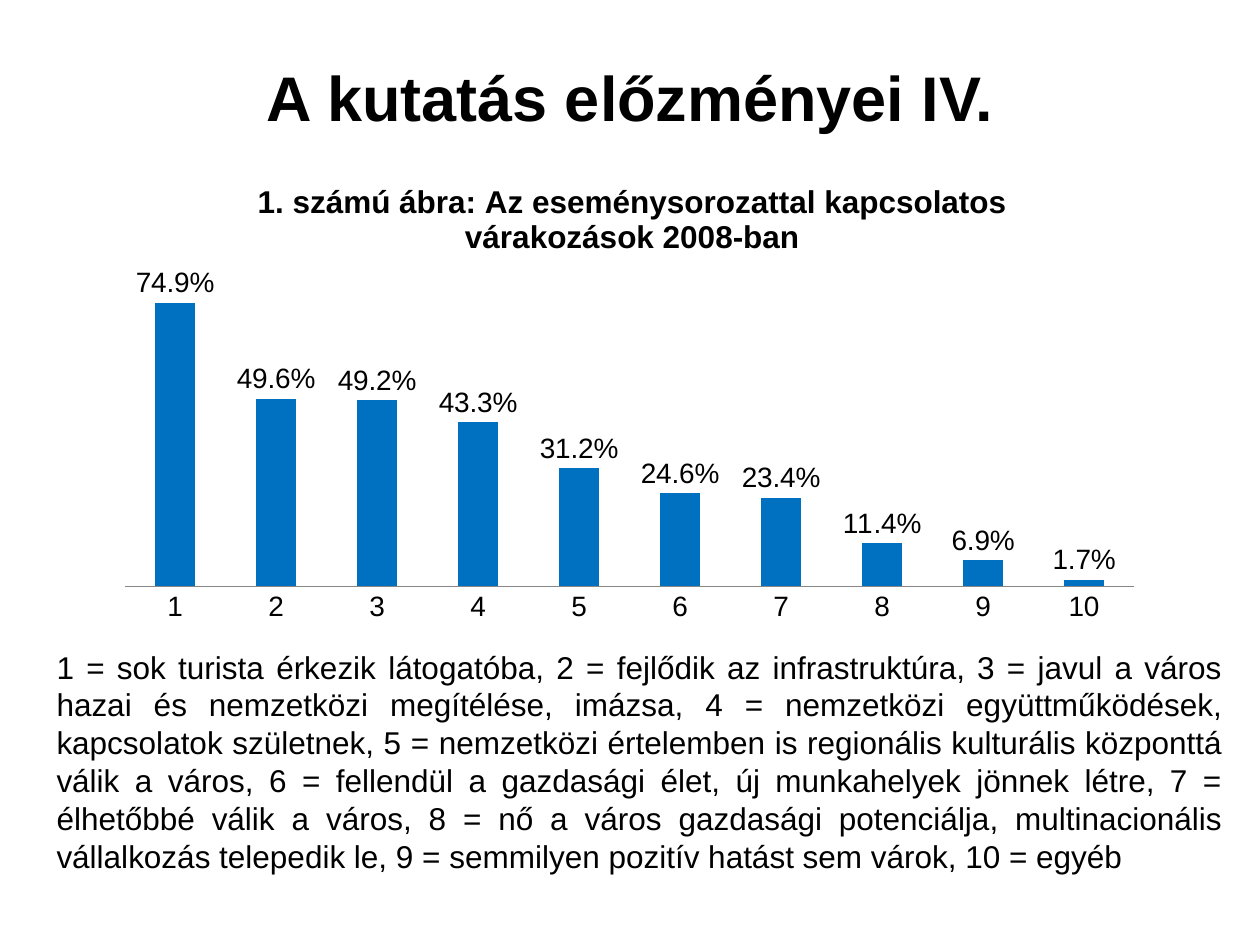
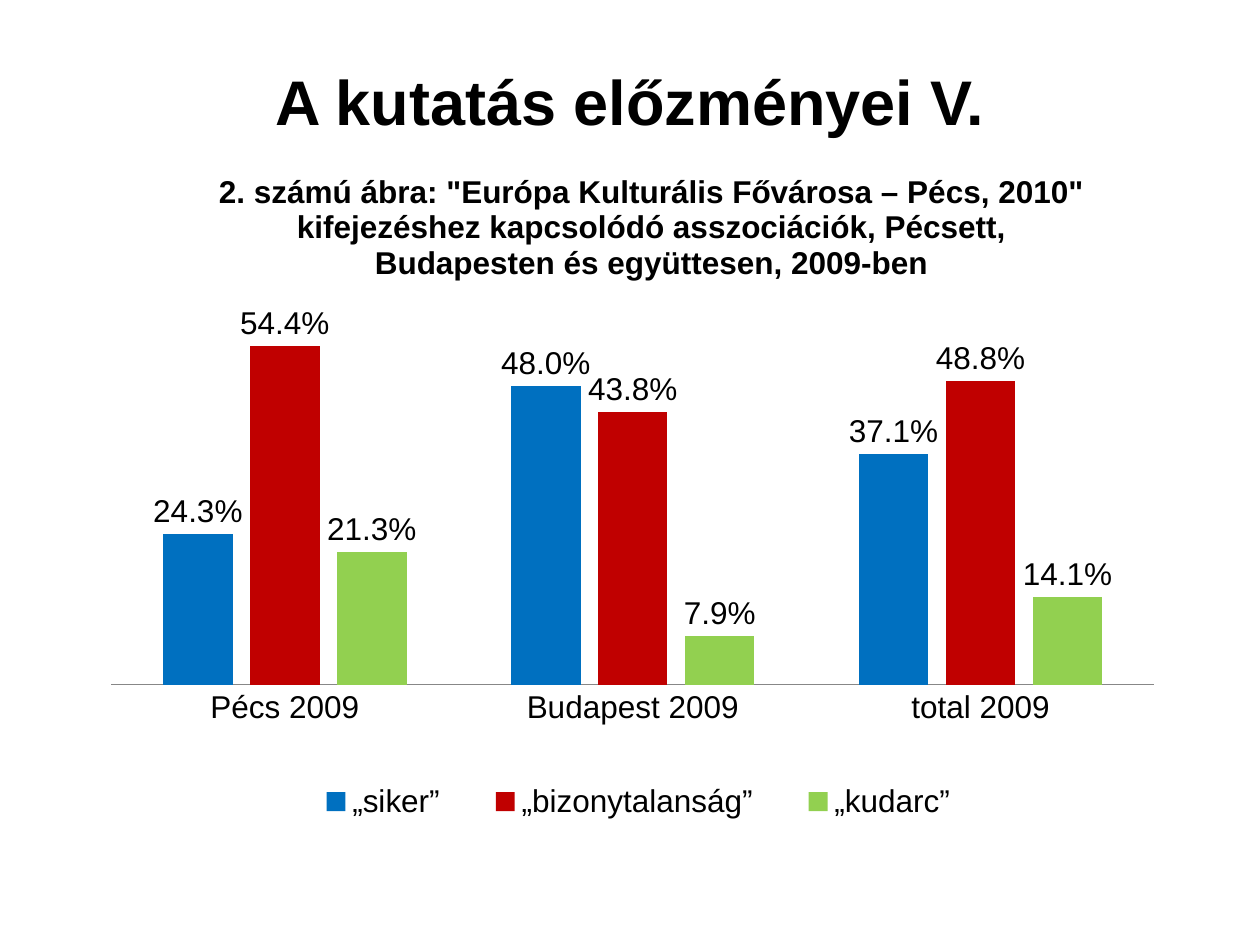
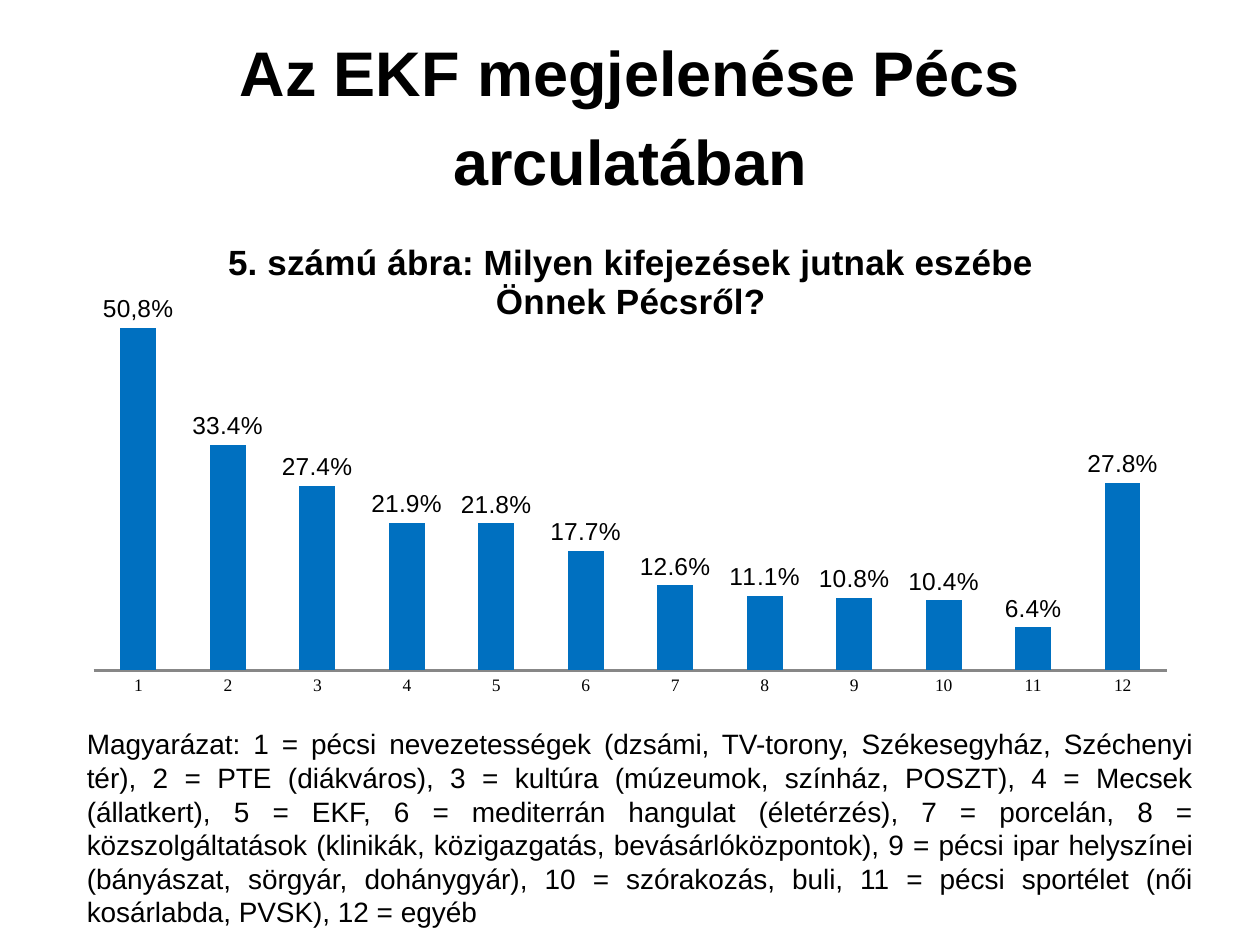
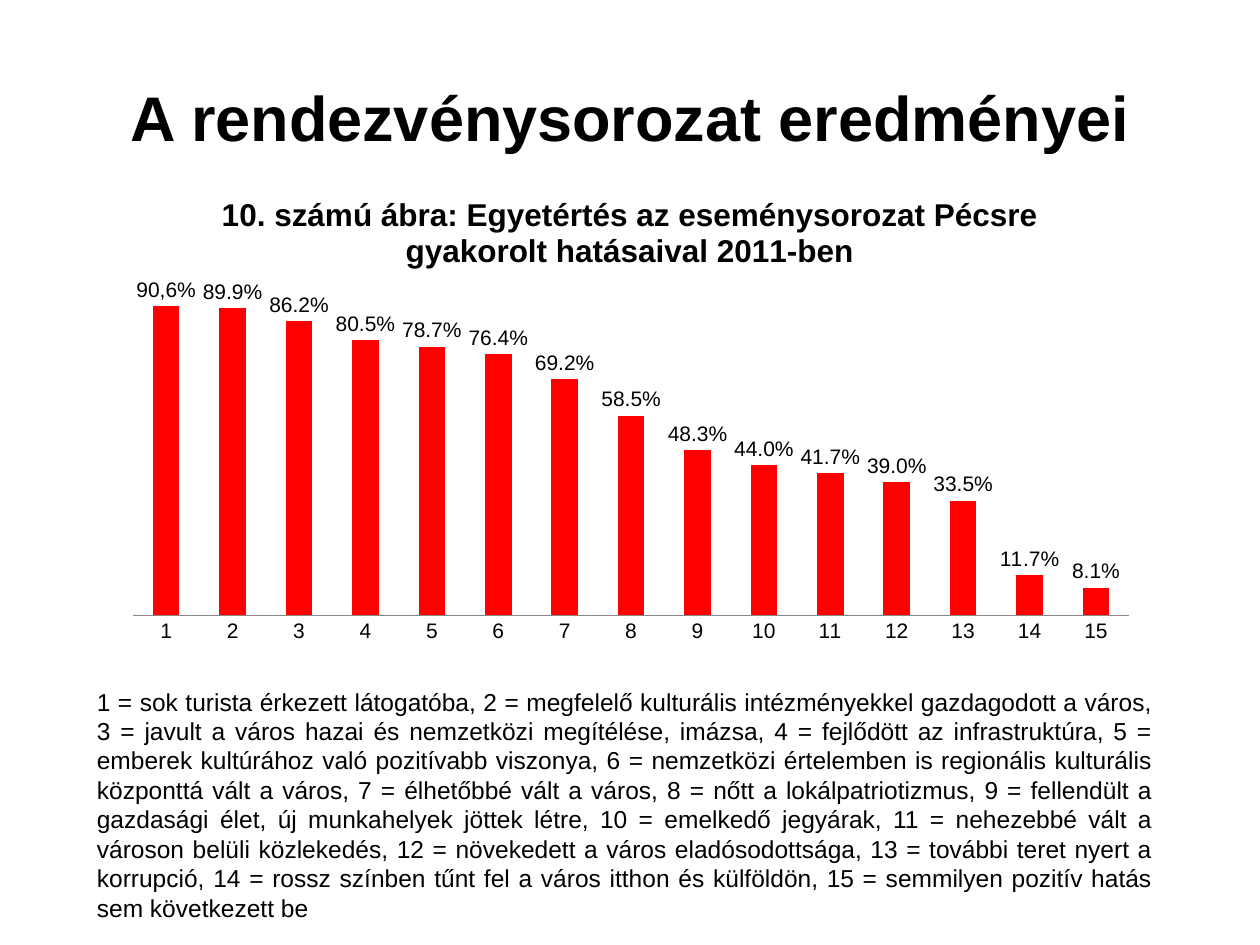
from dataclasses import dataclass
from typing import NamedTuple

from lxml.etree import SubElement
from pptx import Presentation
from pptx.chart.data import CategoryChartData
from pptx.dml.color import RGBColor
from pptx.enum.chart import XL_CHART_TYPE, XL_LABEL_POSITION, XL_LEGEND_POSITION, XL_TICK_LABEL_POSITION, XL_TICK_MARK
from pptx.enum.text import MSO_ANCHOR, MSO_AUTO_SIZE, PP_ALIGN
from pptx.oxml.ns import qn
from pptx.util import Inches, Pt

WIDTH, HEIGHT = Inches(10), Inches(7.5)
COLUMN, ROW = WIDTH / 100, HEIGHT / 75
FONT, AXIS_SERIF = "Arial", "Times New Roman"
BLACK, AXIS_GRAY = "000000", "878787"
BLUE, CRIMSON, GREEN, RED = "0070C0", "C00000", "92D050", "FF0000"
PERCENT = "0.0%"


class Box(NamedTuple):
    """A region in grid columns and rows."""
    left: float
    top: float
    width: float
    height: float

    def lengths(self):
        """Return left, top, width and height as slide lengths."""
        return (round(self.left * COLUMN), round(self.top * ROW),
                round(self.width * COLUMN), round(self.height * ROW))


LOW_TITLE, TALL_TITLE = Box(5, 3, 90, 9.3), Box(5, 3, 90, 12.5)


@dataclass
class BarChart:
    """What one column chart shows, with its layouts in percent of the chart."""
    title: str
    categories: list
    series: list
    maximum: float
    plot: tuple
    title_at: tuple
    title_size: int = 18
    label_size: int = 18
    axis_size: int = 18
    axis_font: str = FONT
    axis_width: float = 0.75
    first_label: str = ""
    legend: tuple = ()


def color(value):
    """Turn a hex string into a colour."""
    return RGBColor.from_string(value)


def style(font, size, bold=False, name=FONT):
    """Set size, weight, typeface and black on a font."""
    font.size, font.bold, font.name = Pt(size), bold, name
    font.color.rgb = color(BLACK)


def numbers(count):
    """List category names from one up to count."""
    return [str(number) for number in range(1, count + 1)]


def lay_out(parent, percents, target=""):
    """Give a chart part a manual layout in percent of the chart."""
    for old in parent.findall(qn("c:layout")):
        parent.remove(old)
    leads = [child for child in parent if child.tag in (qn("c:tx"), qn("c:legendPos"))]
    layout = SubElement(parent, qn("c:layout"))
    parent.insert(len(leads), layout)
    manual = SubElement(layout, qn("c:manualLayout"))
    settings = [("layoutTarget", target)] if target else []
    shares = [round(percent / 100, 4) for percent in percents]
    settings += [("xMode", "edge"), ("yMode", "edge"), *zip("xywh", shares)]
    for name, value in settings:
        SubElement(manual, qn(f"c:{name}")).set("val", str(value))


def add_title(page, text, box, spacing):
    """Fill and place the title placeholder."""
    title = page.shapes.title
    title.left, title.top, title.width, title.height = box.lengths()
    frame = title.text_frame
    frame.text = text
    frame.word_wrap, frame.auto_size = True, MSO_AUTO_SIZE.NONE
    frame.vertical_anchor = MSO_ANCHOR.MIDDLE
    para = frame.paragraphs[0]
    para.alignment = PP_ALIGN.CENTER
    para.line_spacing = spacing
    style(para.font, 36, bold=True)


def add_key(page, text, box, size):
    """Add the justified explanation of the category numbers."""
    frame = page.shapes.add_textbox(*box.lengths()).text_frame
    frame.word_wrap = True
    frame.text = text
    para = frame.paragraphs[0]
    para.alignment = PP_ALIGN.JUSTIFY
    style(para.font, size)


def format_axes(chart, content):
    """Hide the value axis and style the category axis."""
    values = chart.value_axis
    values.minimum_scale, values.maximum_scale = 0, content.maximum
    values.has_major_gridlines = False
    values.visible = False
    axis = chart.category_axis
    axis.major_tick_mark = axis.minor_tick_mark = XL_TICK_MARK.NONE
    axis.tick_label_position = XL_TICK_LABEL_POSITION.NEXT_TO_AXIS
    axis.format.line.color.rgb = color(AXIS_GRAY)
    axis.format.line.width = Pt(content.axis_width)
    style(axis.tick_labels.font, content.axis_size, name=content.axis_font)


def format_series(series, fill, content):
    """Colour a series and label its columns."""
    series.format.fill.solid()
    series.format.fill.fore_color.rgb = color(fill)
    series.invert_if_negative = False
    labels = series.data_labels
    labels.show_value = True
    labels.number_format, labels.number_format_is_linked = PERCENT, False
    labels.position = XL_LABEL_POSITION.OUTSIDE_END
    style(labels.font, content.label_size)
    if content.first_label:
        label = series.points[0].data_label
        label.text_frame.text = content.first_label
        style(label.text_frame.paragraphs[0].font, content.label_size)
        label.position = XL_LABEL_POSITION.OUTSIDE_END


def add_bar_chart(page, content, box):
    """Add a titled column chart filling the box."""
    data = CategoryChartData(number_format=PERCENT)
    data.categories = content.categories
    for name, values, _ in content.series:
        data.add_series(name, values)
    chart = page.shapes.add_chart(XL_CHART_TYPE.COLUMN_CLUSTERED, *box.lengths(), data).chart
    style(chart.font, 10)
    format_axes(chart, content)
    plot = chart.plots[0]
    plot.vary_by_categories = False
    plot.gap_width = 150
    plot.overlap = -25 if len(content.series) > 1 else 0
    for series, (_, _, fill) in zip(plot.series, content.series):
        format_series(series, fill, content)
    chart.has_title = True
    title = chart.chart_title.text_frame
    title.text = content.title
    style(title.paragraphs[0].font, content.title_size, bold=True)
    lay_out(chart.element.find(".//" + qn("c:title")), content.title_at)
    lay_out(chart.element.find(".//" + qn("c:plotArea")), content.plot, "inner")
    chart.has_legend = bool(content.legend)
    if content.legend:
        chart.legend.position = XL_LEGEND_POSITION.TOP
        chart.legend.include_in_layout = False
        style(chart.legend.font, content.label_size)
        lay_out(chart.element.find(".//" + qn("c:legend")), content.legend)


def add_page(deck, title, title_box, content, chart_box, key=(), spacing=1.0):
    """Add a page with a title, a chart and, where given, a key."""
    page = deck.slides.add_slide(deck.slide_layouts[5])
    add_title(page, title, title_box, spacing)
    add_bar_chart(page, content, chart_box)
    if key:
        add_key(page, *key)


def expectations_page(deck):
    """Show what people expected in 2008."""
    values = [0.749, 0.496, 0.492, 0.433, 0.312, 0.246, 0.234, 0.114, 0.069, 0.017]
    content = BarChart(
        "1. számú ábra: Az eseménysorozattal kapcsolatos várakozások 2008-ban",
        numbers(10), [("Series 1", values, BLUE)], maximum=0.8,
        plot=(1.9, 23.8, 96, 66.4), title_at=(14, 0), label_size=16, axis_size=16)
    key = (
        "1 = sok turista érkezik látogatóba, 2 = fejlődik az infrastruktúra, 3 = javul a város "
        "hazai és nemzetközi megítélése, imázsa, 4 = nemzetközi együttműködések, kapcsolatok "
        "születnek, 5 = nemzetközi értelemben is regionális kulturális központtá válik a város, "
        "6 = fellendül a gazdasági élet, új munkahelyek jönnek létre, 7 = élhetőbbé válik a város, "
        "8 = nő a város gazdasági potenciálja, multinacionális vállalkozás telepedik le, "
        "9 = semmilyen pozitív hatást sem várok, 10 = egyéb")
    add_page(deck, "A kutatás előzményei IV.", LOW_TITLE, content,
             Box(8.3, 13.9, 83.5, 36.2), (key, Box(3.5, 50.9, 94.5, 19.2), 18))


def associations_page(deck):
    """Compare associations in two cities and in total."""
    content = BarChart(
        '2. számú ábra: "Európa Kulturális Fővárosa – Pécs, 2010" kifejezéshez kapcsolódó '
        "asszociációk, Pécsett, Budapesten és együttesen, 2009-ben",
        ["Pécs 2009", "Budapest 2009", "total 2009"],
        [("„siker”", [0.243, 0.48, 0.371], BLUE),
         ("„bizonytalanság”", [0.544, 0.438, 0.488], CRIMSON),
         ("„kudarc”", [0.213, 0.079, 0.141], GREEN)],
        maximum=0.6, plot=(3.3, 20.8, 93.9, 53), title_at=(12.5, 0),
        legend=(18.6, 86.4, 64.3, 8))
    add_page(deck, "A kutatás előzményei V.", LOW_TITLE._replace(top=3.3), content,
             Box(5.9, 13.1, 88.2, 55.9))


def image_page(deck):
    """Show which expressions the city brings to mind."""
    values = [0.508, 0.334, 0.274, 0.219, 0.218, 0.177, 0.126, 0.111, 0.108, 0.104, 0.064, 0.278]
    content = BarChart(
        "5. számú ábra: Milyen kifejezések jutnak eszébe Önnek Pécsről?",
        numbers(12), [("Series 1", values, BLUE)], maximum=0.6,
        plot=(2.7, 8.7, 94.7, 77.8), title_at=(14, 2.4), title_size=20, label_size=14,
        axis_size=10, axis_font=AXIS_SERIF, axis_width=1.5, first_label="50,8%")
    key = (
        "Magyarázat: 1 = pécsi nevezetességek (dzsámi, TV-torony, Székesegyház, Széchenyi tér), "
        "2 = PTE (diákváros), 3 = kultúra (múzeumok, színház, POSZT), 4 = Mecsek (állatkert), "
        "5 = EKF, 6 = mediterrán hangulat (életérzés), 7 = porcelán, 8 = közszolgáltatások "
        "(klinikák, közigazgatás, bevásárlóközpontok), 9 = pécsi ipar helyszínei (bányászat, "
        "sörgyár, dohánygyár), 10 = szórakozás, buli, 11 = pécsi sportélet (női kosárlabda, "
        "PVSK), 12 = egyéb")
    add_page(deck, "Az EKF megjelenése Pécs arculatában", TALL_TITLE._replace(top=2.4), content,
             Box(5, 17.5, 90, 41.3), (key, Box(5.9, 57.2, 89.8, 17.2), 16), spacing=Pt(51))


def results_page(deck):
    """Show agreement with the effects of the events in 2011."""
    values = [0.906, 0.899, 0.862, 0.805, 0.787, 0.764, 0.692, 0.585,
              0.483, 0.44, 0.417, 0.39, 0.335, 0.117, 0.081]
    content = BarChart(
        "10. számú ábra: Egyetértés az eseménysorozat Pécsre gyakorolt hatásaival 2011-ben",
        numbers(15), [("Series 1", values, RED)], maximum=1,
        plot=(2.7, 19.4, 94.7, 67.1), title_at=(10.6, 2.6), label_size=12, axis_size=12,
        first_label="90,6%")
    key = (
        "1 = sok turista érkezett látogatóba, 2 = megfelelő kulturális intézményekkel gazdagodott "
        "a város, 3 = javult a város hazai és nemzetközi megítélése, imázsa, 4 = fejlődött az "
        "infrastruktúra, 5 = emberek kultúrához való pozitívabb viszonya, 6 = nemzetközi "
        "értelemben is regionális kulturális központtá vált a város, 7 = élhetőbbé vált a város, "
        "8 = nőtt a lokálpatriotizmus, 9 = fellendült a gazdasági élet, új munkahelyek jöttek "
        "létre, 10 = emelkedő jegyárak, 11 = nehezebbé vált a városon belüli közlekedés, "
        "12 = növekedett a város eladósodottsága, 13 = további teret nyert a korrupció, "
        "14 = rossz színben tűnt fel a város itthon és külföldön, 15 = semmilyen pozitív hatás "
        "sem következett be")
    add_page(deck, "A rendezvénysorozat eredményei", TALL_TITLE, content,
             Box(8.3, 13.9, 83.5, 40.4), (key, Box(6.7, 54, 85.8, 19.9), 14))


def main():
    """Build the deck and save it."""
    deck = Presentation()
    deck.slide_width, deck.slide_height = WIDTH, HEIGHT
    for build in (expectations_page, associations_page, image_page, results_page):
        build(deck)
    deck.save("out.pptx")


if __name__ == "__main__":
    main()
